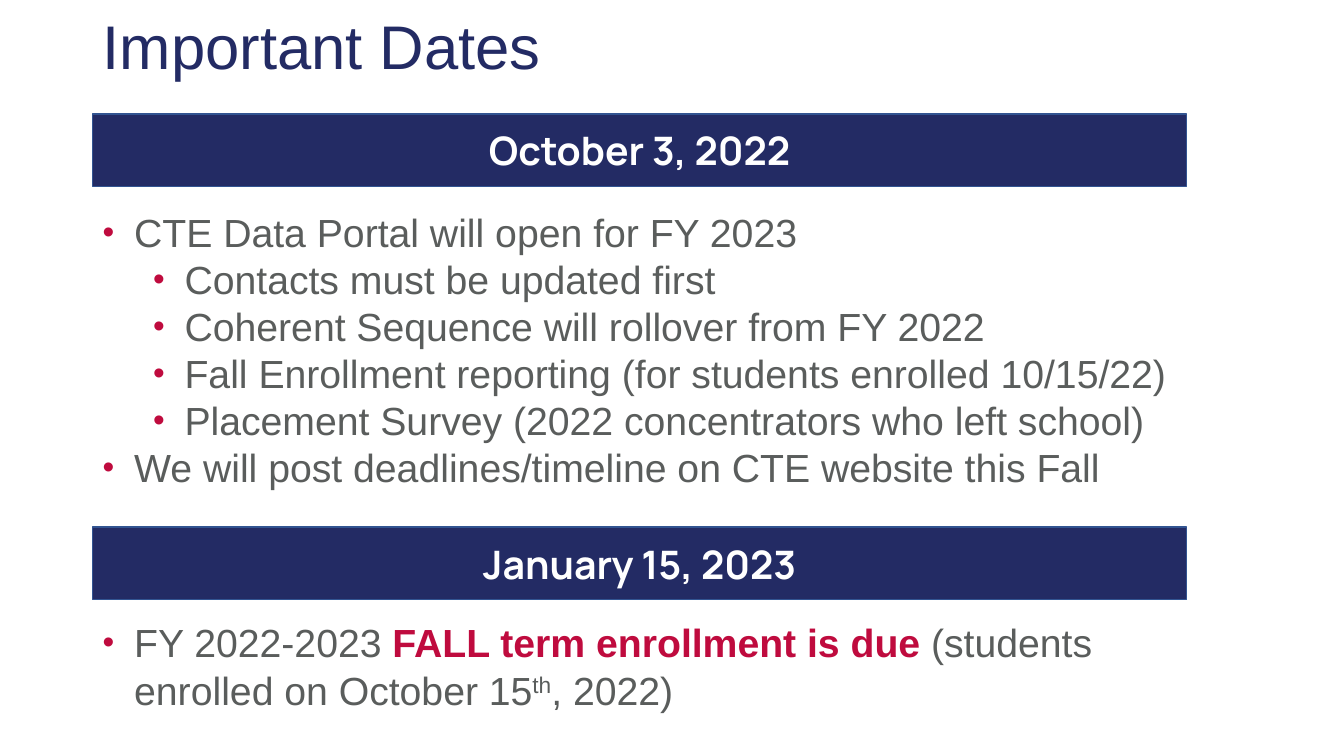
import pptx
import pptx.util
import pptx.dml.color
import pptx.enum.shapes
import pptx.enum.text
import lxml.etree

Pt = pptx.util.Pt
ALIGN = pptx.enum.text.PP_ALIGN
ANCHOR = pptx.enum.text.MSO_ANCHOR
HUES = {"navy": "232B64", "edge": "325491", "red": "BF0B3E",
        "gray": "5A5D5C", "white": "FFFFFF"}
LEFT, WIDTH = 66.24, 781.2
OPEN = [
    (0, [("CTE Data Portal will open for FY 2023", "")]),
    (1, [("Contacts must be updated first", "")]),
    (1, [("Coherent Sequence will rollover from FY 2022", "")]),
    (1, [("Fall Enrollment reporting (for students enrolled 10/15/22)", "")]),
    (1, [("Placement Survey (2022 concentrators who left school)", "")]),
    (0, [("We will post deadlines/timeline on CTE website this Fall", "")]),
]
DUE = [
    (0, [("FY 2022-2023 ", ""), ("FALL term enrollment is due ", "bold"),
         ("(students enrolled on October 15", ""), ("th", "super"),
         (", 2022)", "")]),
]


def hue(name):
    return pptx.dml.color.RGBColor.from_string(HUES[name])


def style(font, face, size, name, bold=False):
    font.name, font.size, font.bold = face, Pt(size), bold
    font.color.rgb = hue(name)


def bullet(para, level):
    props = para._p.get_or_add_pPr()
    props.set("marL", str(Pt(22.5 + 36 * level)))
    props.set("indent", str(Pt(-22.5)))
    space = pptx.oxml.ns.qn
    tint = lxml.etree.SubElement(props, space("a:buClr"))
    lxml.etree.SubElement(tint, space("a:srgbClr"), val=HUES["red"])
    lxml.etree.SubElement(props, space("a:buSzPct"), val="85000")
    lxml.etree.SubElement(props, space("a:buFont"), typeface="Arial")
    lxml.etree.SubElement(props, space("a:buChar"), char="•")


def add_title(slide, text, left, top, width, height):
    title = slide.shapes.title
    title.left, title.top = Pt(left), Pt(top)
    title.width, title.height = Pt(width), Pt(height)
    frame = title.text_frame
    frame.text = text
    frame.vertical_anchor = ANCHOR.TOP
    para = frame.paragraphs[0]
    para.alignment = ALIGN.LEFT
    para.line_spacing = 0.9
    style(para.runs[0].font, "Arial", 44, "navy")


def add_band(slide, text, left, top, width, height):
    band = slide.shapes.add_shape(
        pptx.enum.shapes.MSO_SHAPE.RECTANGLE,
        Pt(left), Pt(top), Pt(width), Pt(height))
    band.shadow.inherit = False
    band.fill.solid()
    band.fill.fore_color.rgb = hue("navy")
    band.line.color.rgb = hue("edge")
    band.line.width = Pt(1)
    frame = band.text_frame
    frame.text = text
    frame.vertical_anchor = ANCHOR.MIDDLE
    para = frame.paragraphs[0]
    para.alignment = ALIGN.CENTER
    style(para.runs[0].font, "Manrope", 28, "white", True)


def add_list(slide, items, left, top, width, height):
    box = slide.shapes.add_textbox(Pt(left), Pt(top), Pt(width), Pt(height))
    frame = box.text_frame
    frame.word_wrap = True
    for index, (level, parts) in enumerate(items):
        para = frame.add_paragraph() if index else frame.paragraphs[0]
        para.level = level
        bullet(para, level)
        para.line_spacing = Pt(33.6)
        for text, kind in parts:
            run = para.add_run()
            run.text = text
            bold = kind == "bold"
            style(run.font, "Arial", 28, "red" if bold else "gray", bold)
            if kind == "super":
                run.font._element.set("baseline", "30000")


def add_date(slide, date, items, left, top, width, gap, height):
    add_band(slide, date, left, top, width, 51.84)
    add_list(slide, items, left, top + gap, width, height)


def main():
    deck = pptx.Presentation()
    deck.slide_width, deck.slide_height = Pt(960), Pt(540)
    slide = deck.slides.add_slide(deck.slide_layouts[5])
    add_title(slide, "Important Dates", LEFT, 7.92, 828, 104.4)
    add_date(slide, "October 3, 2022", OPEN, LEFT, 81.36, WIDTH, 64.08, 244.8)
    add_date(slide, "January 15, 2023", DUE, LEFT, 376.56, WIDTH, 61.92, 74.88)
    deck.save("out.pptx")


if __name__ == "__main__":
    main()
